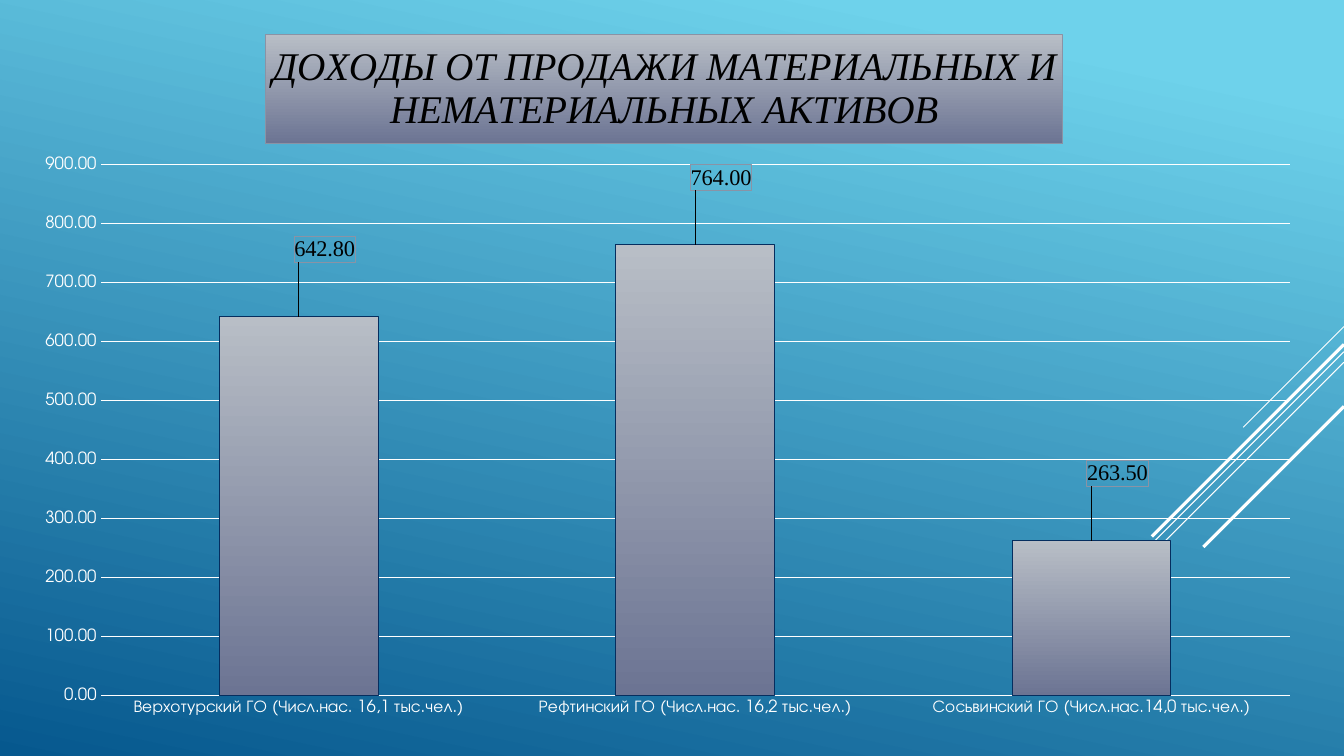
from pptx import Presentation
from pptx.chart.data import CategoryChartData
from pptx.dml.color import RGBColor
from pptx.enum.chart import XL_CHART_TYPE, XL_LABEL_POSITION, XL_TICK_MARK
from pptx.enum.shapes import MSO_CONNECTOR
from pptx.oxml import parse_xml
from pptx.oxml.ns import nsdecls, qn
from pptx.util import Pt
from lxml import etree

PX = 9525
SLIDE_W, SLIDE_H = 1280, 720
COLUMNS = XL_CHART_TYPE.COLUMN_CLUSTERED
OUTSIDE = XL_LABEL_POSITION.OUTSIDE_END
NO_TICK = XL_TICK_MARK.NONE
STRAIGHT = MSO_CONNECTOR.STRAIGHT

COLORS = {
    "sky": "6ED2EB", "sea": "06588E",
    "silver": "B8BEC6", "slate": "6C7493",
    "outline": "052E5F", "frame": "8A93A5",
    "white": "FFFFFF", "black": "000000",
}
SANS, SERIF = "TeX Gyre Adventor", "Times New Roman"
NUMBER = "#,##0.00"
TITLE = "ДОХОДЫ ОТ ПРОДАЖИ МАТЕРИАЛЬНЫХ И НЕМАТЕРИАЛЬНЫХ АКТИВОВ"
INCOME = [
    ("Верхотурский ГО (Числ.нас. 16,1 тыс.чел.)", 642.8, (0.02, -0.07)),
    ("Рефтинский ГО (Числ.нас. 16,2 тыс.чел.)", 764, (0.02, -0.07)),
    ("Сосьвинский ГО (Числ.нас.14,0 тыс.чел.)", 263.5, (0.02, -0.07)),
]
RAYS = [(311, 96, 0.75), (335, 313, 0.75), (345, 199, 0.75),
        (328, 183, 2.25), (387, 134, 2.25)]


def rgb(name):
    """Return the named colour."""
    return RGBColor.from_string(COLORS[name])


def set_font(font, size, color, name, **more):
    """Format a font."""
    font.color.rgb = rgb(color)
    for key, value in {"size": Pt(size), "name": name, **more}.items():
        setattr(font, key, value)


def set_line(line, color, width):
    """Give a line its colour and width in points."""
    line.color.rgb = rgb(color)
    line.width = Pt(width)


def set_gradient(fill, angle, *stops):
    """Fill with a linear gradient of (position, colour) stops."""
    fill.gradient()
    fill.gradient_angle = angle
    for stop, (position, color) in zip(fill.gradient_stops, stops):
        stop.position = position
        stop.color.rgb = rgb(color)


def layout_xml(**values):
    """Build a manual chart layout from its fractions."""
    items = "".join(f'<c:{k} val="{v}"/>' for k, v in values.items())
    return parse_xml(f'<c:layout {nsdecls("c")}><c:manualLayout>{items}'
                     '</c:manualLayout></c:layout>')


def draw_rays(s, right):
    """Draw the diagonal rays running down from the right edge."""
    for top, length, width in RAYS:
        ray = s.shapes.add_connector(
            STRAIGHT, right * PX, top * PX,
            (right - length) * PX, (top + length) * PX)
        set_line(ray.line, "white", width)
        etree.SubElement(ray._element.spPr, qn("a:effectLst"))


def format_title(chart):
    """Write the chart title on its shaded plate."""
    chart.has_title = True
    title = chart.chart_title
    title.include_in_layout = False
    r = title.text_frame.paragraphs[0].add_run()
    r.text = TITLE
    set_font(r.font, 28, "black", SERIF, italic=True, bold=False)
    set_gradient(title.format.fill, 270, (0, "silver"), (1, "slate"))
    set_line(title.format.line, "frame", 0.75)
    element = title._element
    for old in element.findall(qn("c:layout")):
        element.remove(old)
    element.find(qn("c:tx")).addnext(
        layout_xml(xMode="edge", yMode="edge", x=0.19, y=0.03))


def format_axes(chart):
    """Format both axes and the gridlines."""
    values = chart.value_axis
    for axis in (chart.category_axis, values):
        axis.major_tick_mark = axis.minor_tick_mark = NO_TICK
        axis.format.line.fill.background()
        set_font(axis.tick_labels.font, 12, "white", SANS)
    scale = {"minimum_scale": 0, "maximum_scale": 900, "major_unit": 100}
    for key, value in scale.items():
        setattr(values, key, value)
    values.tick_labels.number_format = NUMBER
    values.tick_labels.number_format_is_linked = False
    set_line(values.major_gridlines.format.line, "white", 0.75)


def format_label(point, shift):
    """Show a framed value above a column, moved by the given fractions."""
    label = point.data_label
    set_font(label.font, 16, "black", SERIF)
    label.position = OUTSIDE
    number = parse_xml(f'<c:numFmt {nsdecls("c")} formatCode="{NUMBER}" '
                       'sourceLinked="0"/>')
    frame = parse_xml(
        f'<c:spPr {nsdecls("c", "a")}><a:noFill/><a:ln w="6350"><a:solidFill>'
        f'<a:srgbClr val="{COLORS["frame"]}"/></a:solidFill></a:ln></c:spPr>')
    element = label._get_or_add_dLbl()
    for old in element.findall(qn("c:spPr")):
        element.remove(old)
    x, y = shift
    previous = element.find(qn("c:idx"))
    for part in (layout_xml(x=x, y=y), number, frame):
        previous.addnext(part)
        previous = part


def draw_chart(s, x, y, w, h):
    """Draw the income column chart in the given box."""
    data = CategoryChartData(number_format=NUMBER)
    data.categories = [name for name, _, _ in INCOME]
    data.add_series(TITLE, [value for _, value, _ in INCOME])
    chart = s.shapes.add_chart(
        COLUMNS, x * PX, y * PX, w * PX, h * PX, data).chart
    set_font(chart.font, 10, "white", SANS)
    chart.has_legend = False
    format_title(chart)
    format_axes(chart)
    plot = chart.plots[0]
    plot.gap_width = 150
    plot.vary_by_categories = False
    series = plot.series[0]
    set_gradient(series.format.fill, 270, (0, "silver"), (1, "slate"))
    set_line(series.format.line, "outline", 0.75)
    for i, (_, _, shift) in enumerate(INCOME):
        format_label(series.points[i], shift)
    area = chart._chartSpace.chart.plotArea
    for old in area.findall(qn("c:layout")):
        area.remove(old)
    area.insert(0, layout_xml(layoutTarget="inner", xMode="edge", yMode="edge",
                              x=0.063, y=0.212, w=0.917, h=0.741))


def main():
    """Build and save the slide."""
    prs = Presentation()
    prs.slide_width, prs.slide_height = SLIDE_W * PX, SLIDE_H * PX
    s = prs.slides.add_slide(prs.slide_layouts[6])
    set_gradient(s.background.fill, 258, (0.1, "sky"), (1, "sea"))
    draw_rays(s, SLIDE_W)
    draw_chart(s, 18, 12, 1235, 683)
    prs.save("out.pptx")


if __name__ == "__main__":
    main()
